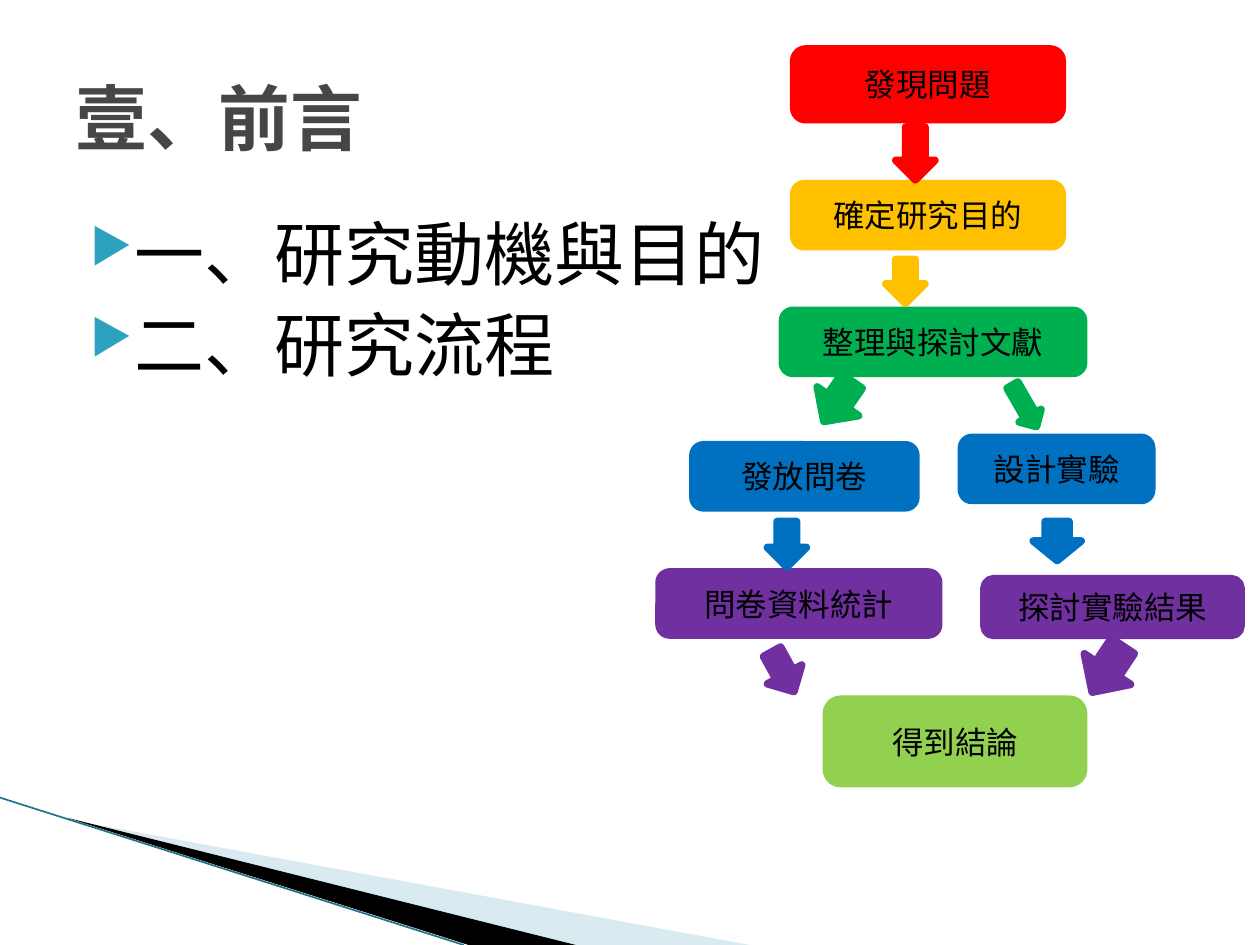
from typing import Any, NamedTuple

from lxml.etree import SubElement
from pptx import Presentation
from pptx.dml.color import RGBColor
from pptx.enum.shapes import MSO_CONNECTOR, MSO_SHAPE
from pptx.enum.text import MSO_ANCHOR, PP_ALIGN
from pptx.oxml.ns import qn
from pptx.util import Pt

FONT = "Courier New"
RED, AMBER, GREEN = "FF0000", "FFC000", "00B050"
BLUE, PURPLE, LIME = "0070C0", "7030A0", "92D050"
BLACK, GREY, TEAL, PALE_TEAL, DARK_TEAL = "000000", "464646", "2DA2BF", "A0CBDC", "1F7388"
OUTLINE_WIDTH = 4.33


class Frame(NamedTuple):
    left: float
    top: float
    width: float
    height: float


class Step(NamedTuple):
    label: str
    color: str
    frame: Frame


class Arrow(NamedTuple):
    color: str
    frame: Frame
    rotation: float = 0


class Wedge(NamedTuple):
    color: str
    points: list[tuple[float, float]]
    opacity: int = 100


WEDGES = [
    Wedge(PALE_TEAL, [(39.6, 468.4), (428.4, 540), (328.3, 540)], 40),
    Wedge(BLACK, [(38.2, 467.3), (329, 540), (267.8, 540)]),
]

STEPS = [
    Step("發現問題", RED, Frame(453.6, 28, 153.4, 40.4)),
    Step("確定研究目的", AMBER, Frame(453.6, 105, 153.4, 36)),
    Step("整理與探討文獻", GREEN, Frame(447.1, 177.4, 172.1, 36)),
    Step("發放問卷", BLUE, Frame(396, 254.2, 127.4, 36)),
    Step("設計實驗", BLUE, Frame(549.4, 250, 108.7, 36)),
    Step("問卷資料統計", PURPLE, Frame(376.6, 326.9, 159.8, 36)),
    Step("探討實驗結果", PURPLE, Frame(562.3, 330.7, 146.9, 32.4)),
    Step("得到結論", LIME, Frame(472.3, 399.6, 146.9, 48.2)),
]

ARROWS = [
    Arrow(RED, Frame(511.9, 72.6, 22.3, 30.2)),
    Arrow(AMBER, Frame(506.2, 148.2, 22.3, 25.2)),
    Arrow(GREEN, Frame(464.4, 215.3, 28.8, 28.1), 34.8),
    Arrow(GREEN, Frame(578.2, 218.2, 14.4, 27.4), 330),
    Arrow(BLUE, Frame(438.5, 298, 22.3, 26)),
    Arrow(BLUE, Frame(590.4, 298, 27.4, 22.3)),
    Arrow(PURPLE, Frame(436.3, 370.8, 22.3, 26), 331.2),
    Arrow(PURPLE, Frame(617, 366.5, 31.7, 31.7), 33.5),
]


def rgb(color: str) -> RGBColor:
    return RGBColor.from_string(color)


def lengths(frame: Frame) -> list[Pt]:
    return [Pt(value) for value in frame]


def write(para: Any, text: str, size: float, color: str, bold: bool = False) -> None:
    span = para.add_run()
    span.text = text
    for name, value in {"name": FONT, "size": Pt(size), "bold": bold}.items():
        setattr(span.font, name, value)
    span.font.color.rgb = rgb(color)


def add_bullet(para: Any) -> None:
    """Give the paragraph a teal triangle with a hanging indent."""
    properties = para._p.get_or_add_pPr()
    properties.set("marL", str(Pt(28.8)))
    properties.set("indent", str(Pt(-20.2)))
    color = SubElement(properties, qn("a:buClr"))
    SubElement(color, qn("a:srgbClr"), val=TEAL)
    SubElement(properties, qn("a:buSzPct"), val="68000")
    SubElement(properties, qn("a:buChar"), char="▶")


def add_text_box(slide: Any, frame: Frame, anchor: MSO_ANCHOR) -> Any:
    text_frame = slide.shapes.add_textbox(*lengths(frame)).text_frame
    text_frame.word_wrap = True
    text_frame.vertical_anchor = anchor
    return text_frame


def add_wedge(slide: Any, wedge: Wedge) -> None:
    points = [(Pt(x), Pt(y)) for x, y in wedge.points]
    builder = slide.shapes.build_freeform(*points[0])
    builder.add_line_segments(points[1:], close=True)
    shape = builder.convert_to_shape()
    shape.shadow.inherit = False
    shape.fill.solid()
    shape.fill.fore_color.rgb = rgb(wedge.color)
    shape.line.fill.background()
    if wedge.opacity < 100:
        fill_color = shape._element.spPr.find(f"{qn('a:solidFill')}/{qn('a:srgbClr')}")
        SubElement(fill_color, qn("a:alpha"), val=str(wedge.opacity * 1000))


def add_edge_line(slide: Any) -> None:
    line = slide.shapes.add_connector(
        MSO_CONNECTOR.STRAIGHT, Pt(0), Pt(455.8), Pt(265), Pt(540))
    line.line.color.rgb = rgb(DARK_TEAL)
    line.line.width = Pt(0.95)
    SubElement(line._element.spPr, qn("a:effectLst"))


def add_solid(slide: Any, kind: MSO_SHAPE, frame: Frame, color: str) -> Any:
    """Add a preset shape whose outline matches its fill."""
    shape = slide.shapes.add_shape(kind, *lengths(frame))
    shape.shadow.inherit = False
    shape.fill.solid()
    shape.fill.fore_color.rgb = rgb(color)
    shape.line.color.rgb = rgb(color)
    shape.line.width = Pt(OUTLINE_WIDTH)
    return shape


def add_step(slide: Any, step: Step) -> None:
    box = add_solid(slide, MSO_SHAPE.ROUNDED_RECTANGLE, step.frame, step.color)
    box.text_frame.word_wrap = True
    box.text_frame.vertical_anchor = MSO_ANCHOR.MIDDLE
    para = box.text_frame.paragraphs[0]
    para.alignment = PP_ALIGN.CENTER
    write(para, step.label, 18, BLACK)


def add_arrow(slide: Any, arrow: Arrow) -> None:
    shape = add_solid(slide, MSO_SHAPE.DOWN_ARROW, arrow.frame, arrow.color)
    shape.rotation = arrow.rotation


def main() -> None:
    deck = Presentation()
    deck.slide_width, deck.slide_height = Pt(720), Pt(540)
    page = deck.slides.add_slide(deck.slide_layouts[6])

    for wedge in WEDGES:
        add_wedge(page, wedge)
    add_edge_line(page)

    title = add_text_box(page, Frame(36, 21.6, 648, 90), MSO_ANCHOR.MIDDLE)
    write(title.paragraphs[0], "壹、前言", 41, GREY, bold=True)

    body = add_text_box(page, Frame(36, 116.6, 648, 356.4), MSO_ANCHOR.TOP)
    for index, topic in enumerate(["一、研究動機與目的", "二、研究流程"]):
        para = body.add_paragraph() if index else body.paragraphs[0]
        add_bullet(para)
        para.space_before = Pt(4 if index else 0)
        write(para, topic, 40, BLACK)

    for step in STEPS:
        add_step(page, step)
    for arrow in ARROWS:
        add_arrow(page, arrow)

    deck.save("out.pptx")


if __name__ == "__main__":
    main()
